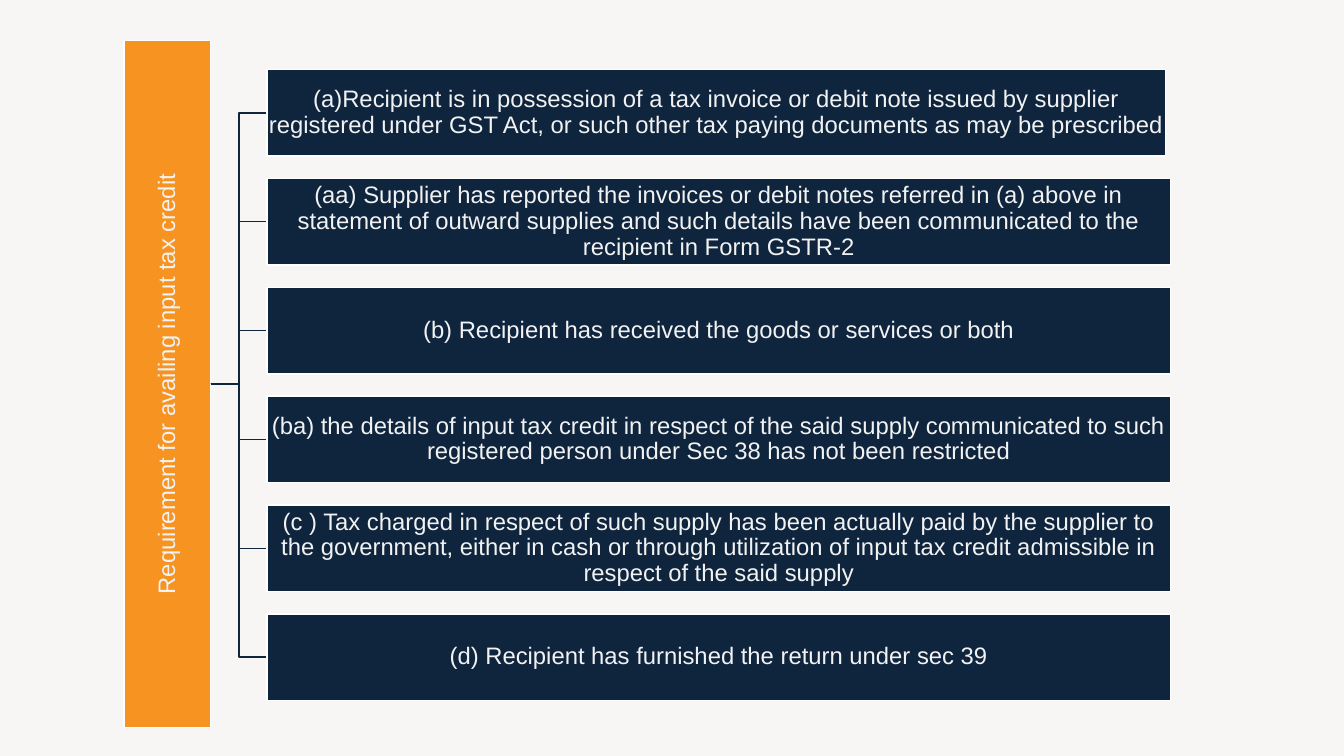
from lxml.etree import SubElement
from pptx import Presentation
from pptx.dml.color import RGBColor
from pptx.enum.shapes import MSO_CONNECTOR as CONN, MSO_SHAPE as SHAPE
from pptx.enum.text import MSO_ANCHOR as ANCHOR, MSO_AUTO_SIZE as FIT, PP_ALIGN as ALIGN
from pptx.oxml.ns import qn
from pptx.util import Inches, Pt

TITLE = "Requirement for availing input tax credit"
CONDITIONS = [
    "(a)Recipient is in possession of a tax invoice or debit note issued by supplier registered under GST Act, "
    "or such other tax paying documents as may be prescribed",
    "(aa) Supplier has reported the invoices or debit notes referred in (a) above in statement of outward supplies "
    "and such details have been communicated to the recipient in Form GSTR-2",
    "(b) Recipient has received the goods or services or both",
    "(ba) the details of input tax credit in respect of the said supply communicated to such registered person "
    "under Sec 38 has not been restricted",
    "(c ) Tax charged in respect of such supply has been actually paid by the supplier to the government, either in "
    "cash or through utilization of input tax credit admissible in respect of the said supply",
    "(d) Recipient has furnished the return under sec 39",
]
COLORS = {"back": "F8F6F5", "bar": "F79320", "box": "0F253E", "edge": "FFFFFF", "text": "F2F2F2"}
SLIDE_W, SLIDE_H = 13.33, 7.5
BAR_LENGTH, BAR_CENTER = 6.82, (1.66, 3.81)
BOX_LEFT, BOX_TOP, BOX_H, PITCH = 2.65, 0.69, 0.86, 1.08
FIRST_W, BOX_W = 8.91, 8.96
MARGIN = Inches(0.01)
FRAME = {"margin_left": MARGIN, "margin_right": MARGIN, "margin_top": MARGIN, "margin_bottom": MARGIN,
         "word_wrap": True, "auto_size": FIT.NONE, "vertical_anchor": ANCHOR.MIDDLE}
PARAGRAPH = {"alignment": ALIGN.CENTER, "line_spacing": 0.9}
FONT = {"name": "Arial", "size": Pt(17), "bold": False}


def rgb(name):
    return RGBColor.from_string(COLORS[name])


def apply(target, values):
    for key, value in values.items():
        setattr(target, key, value)


def paint(fill, name):
    fill.solid()
    fill.fore_color.rgb = rgb(name)


def draw_line(line, name):
    paint(line.fill, name)
    line.width = Pt(1)


def format_panel(sp, text, color):
    paint(sp.fill, color)
    draw_line(sp.line, "edge")
    tf = sp.text_frame
    apply(tf, FRAME)
    p = tf.paragraphs[0]
    apply(p, PARAGRAPH)
    r = p.add_run()
    r.text = text
    apply(r.font, FONT)
    r.font.color.rgb = rgb("text")


def add_branch(s, y):
    x = BAR_CENTER[0] + BOX_H / 2
    c = s.shapes.add_connector(CONN.ELBOW, *map(Inches, (x, BAR_CENTER[1], BOX_LEFT, y)))
    draw_line(c.line, "box")
    SubElement(c._element.spPr, qn("a:effectLst"))


def add_box(s, text, top, width):
    sp = s.shapes.add_shape(SHAPE.RECTANGLE, *map(Inches, (BOX_LEFT, top, width, BOX_H)))
    sp.shadow.inherit = False
    format_panel(sp, text, "box")


def main():
    prs = Presentation()
    prs.slide_width, prs.slide_height = Inches(SLIDE_W), Inches(SLIDE_H)
    s = prs.slides.add_slide(prs.slide_layouts[5])
    paint(s.background.fill, "back")

    title = s.shapes.title
    apply(title, {"left": Inches(BAR_CENTER[0] - BAR_LENGTH / 2), "top": Inches(BAR_CENTER[1] - BOX_H / 2),
                  "width": Inches(BAR_LENGTH), "height": Inches(BOX_H), "rotation": 270})
    format_panel(title, TITLE, "bar")

    tops = [BOX_TOP + i * PITCH for i in range(len(CONDITIONS))]
    for top in tops:
        add_branch(s, top + BOX_H / 2)
    for i, (text, top) in enumerate(zip(CONDITIONS, tops)):
        add_box(s, text, top, BOX_W if i else FIRST_W)

    prs.save("out.pptx")


if __name__ == "__main__":
    main()
